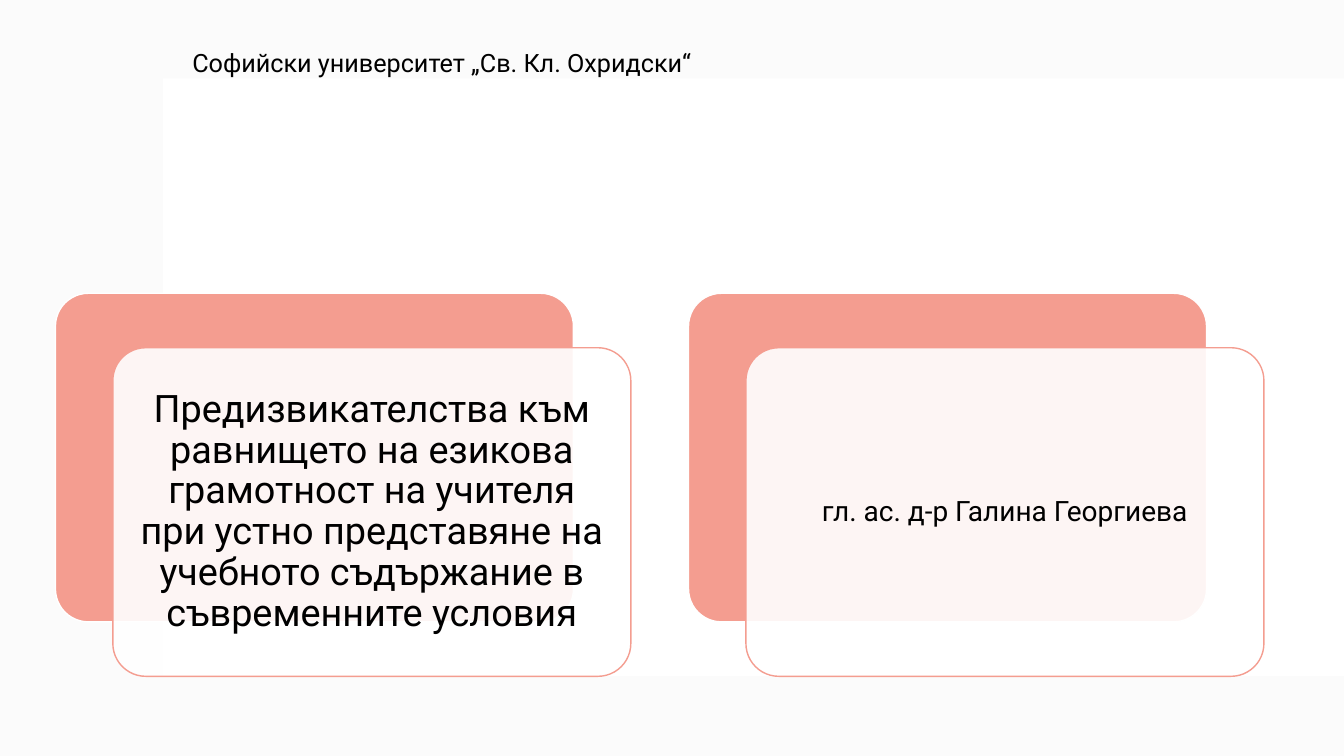
from pptx import Presentation
from pptx.dml.color import RGBColor
from pptx.enum import shapes, text
from pptx.oxml.ns import qn
from pptx.util import Pt
from lxml import etree

SLIDE_W, SLIDE_H = 960, 540
CARD_W, CARD_H = 370, 234.7
CARD_LEFT, CARD_TOP, CARD_PITCH = 39.6, 209.5, 452.2
SHIFT_X, SHIFT_Y = 41, 38.9
TEXT_MARGIN = 6.7
CORAL, WHITE, GREY, BLACK = "F49D90", "FFFFFF", "F4F4F4", "000000"


def color(hex_value):
    return RGBColor.from_string(hex_value)


def add_panel(slide, kind, box, fill, alpha=100, line=None):
    sp = slide.shapes.add_shape(kind, *map(Pt, box))
    sp.shadow.inherit = False
    sp.fill.solid()
    sp.fill.fore_color.rgb = color(fill)
    if alpha < 100:
        clr = sp.fill._xPr.find(qn("a:solidFill"))[0]
        etree.SubElement(clr, qn("a:alpha")).set("val", str(alpha * 1000))
    if line:
        sp.line.color.rgb = color(line)
        sp.line.width = Pt(1)
    else:
        sp.line.fill.background()
    return sp


def add_rounded(slide, box, fill, line, alpha=100):
    sp = add_panel(slide, shapes.MSO_SHAPE.ROUNDED_RECTANGLE, box, fill, alpha, line)
    sp.adjustments[0] = 0.1


def add_label(slide, box, words, size):
    tf = slide.shapes.add_textbox(*map(Pt, box)).text_frame
    tf.word_wrap = True
    p = tf.paragraphs[0]
    p.text = words
    p.font.size = Pt(size)
    p.font.name = "Roboto"
    p.font.color.rgb = color(BLACK)
    return tf


def add_card(slide, left, words, size, inset):
    add_rounded(slide, (left, CARD_TOP, CARD_W, CARD_H), CORAL, WHITE)
    x, y = left + SHIFT_X, CARD_TOP + SHIFT_Y
    add_rounded(slide, (x, y, CARD_W, CARD_H), WHITE, CORAL, alpha=90)
    box = (x + TEXT_MARGIN, y + TEXT_MARGIN,
           CARD_W - 2 * TEXT_MARGIN, CARD_H - 2 * TEXT_MARGIN)
    tf = add_label(slide, box, words, size)
    tf.vertical_anchor = text.MSO_ANCHOR.MIDDLE
    tf.margin_left = tf.margin_right = Pt(inset)
    tf.margin_top = tf.margin_bottom = Pt(inset)
    p = tf.paragraphs[0]
    p.alignment = text.PP_ALIGN.CENTER
    p.line_spacing = 0.9


def main():
    prs = Presentation()
    prs.slide_width, prs.slide_height = Pt(SLIDE_W), Pt(SLIDE_H)
    slide = prs.slides.add_slide(prs.slide_layouts[6])
    rect = shapes.MSO_SHAPE.RECTANGLE
    add_panel(slide, rect, (0, 0, SLIDE_W, SLIDE_H), GREY, alpha=35)
    add_panel(slide, rect, (116.4, 56, SLIDE_W - 116.4, 427), WHITE)
    cards = [
        ("Предизвикателства към равнището на езикова грамотност на учителя "
         "при устно представяне на учебното съдържание в съвременните условия", 27, 8),
        ("гл. ас. д-р Галина Георгиева", 20, 6),
    ]
    for i, (words, size, inset) in enumerate(cards):
        add_card(slide, CARD_LEFT + i * CARD_PITCH, words, size, inset)
    heading = add_label(slide, (130.3, 30.2, 480, 29),
                        "Софийски университет „Св. Кл. Охридски“", 18)
    heading.auto_size = text.MSO_AUTO_SIZE.SHAPE_TO_FIT_TEXT
    prs.save("out.pptx")


if __name__ == "__main__":
    main()
